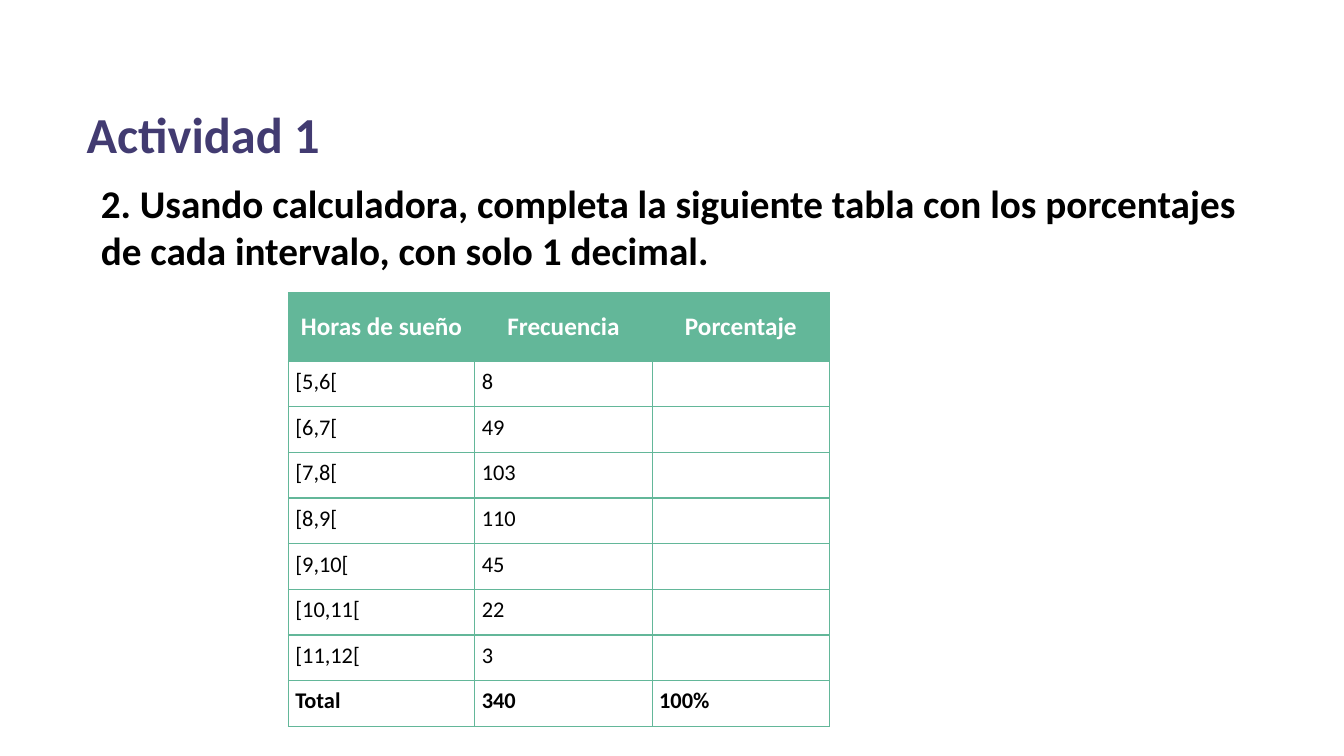
from lxml.etree import SubElement
from pptx import Presentation
from pptx.dml.color import RGBColor
from pptx.enum.text import MSO_ANCHOR as Anchor, MSO_AUTO_SIZE as AutoSize, PP_ALIGN as Align
from pptx.oxml.ns import qn
from pptx.util import Pt

FONT = "Calibri"
COLORS = {"title": "423B71", "text": "000000", "green": "63B799", "white": "FFFFFF"}

HEADERS = ["Horas de sueño", "Frecuencia", "Porcentaje"]
FREQUENCIES = [8, 49, 103, 110, 45, 22, 3]
FIRST_HOUR = 5
COLUMN_WIDTHS = [133.2, 126.7, 126.7]
HEADER_HEIGHT, ROW_HEIGHT = 49, 32.6


def add_run(paragraph, text, size, color, bold=True):
    run = paragraph.add_run()
    run.text = text
    font = run.font
    font.name, font.size, font.bold = FONT, Pt(size), bold
    font.color.rgb = RGBColor.from_string(COLORS[color])


def fill_placeholder(shape, box, text, size, color):
    shape.left, shape.top, shape.width, shape.height = map(Pt, box)
    frame = shape.text_frame
    frame.word_wrap = True
    frame.auto_size = AutoSize.NONE
    frame.vertical_anchor = Anchor.TOP
    paragraph = frame.paragraphs[0]
    paragraph.alignment = Align.LEFT
    paragraph.space_before = Pt(0)
    properties = paragraph._p.get_or_add_pPr()
    properties.set("marL", "0")
    properties.set("indent", "0")
    SubElement(properties, qn("a:buNone"))
    add_run(paragraph, text, size, color)


def add_borders(cell, color):
    properties = cell._tc.get_or_add_tcPr()
    for side in ("lnL", "lnR", "lnT", "lnB"):
        line = SubElement(properties, qn(f"a:{side}"), w=str(Pt(1)))
        solid = SubElement(line, qn("a:solidFill"))
        SubElement(solid, qn("a:srgbClr"), val=COLORS[color])


def format_cell(cell, text, is_header, is_total):
    add_borders(cell, "green")
    paragraph = cell.text_frame.paragraphs[0]
    if is_header:
        cell.fill.solid()
        cell.fill.fore_color.rgb = RGBColor.from_string(COLORS["green"])
        cell.vertical_anchor = Anchor.MIDDLE
        paragraph.alignment = Align.CENTER
        add_run(paragraph, text, 18, "white")
        return
    cell.fill.background()
    cell.margin_left = cell.margin_right = cell.margin_top = cell.margin_bottom = Pt(5)
    if text:
        add_run(paragraph, text, 16, "text", bold=is_total)


def add_frequency_table(slide, left, top):
    intervals = [[f"[{hour},{hour + 1}[", str(frequency), ""]
                 for hour, frequency in enumerate(FREQUENCIES, FIRST_HOUR)]
    rows = [HEADERS, *intervals, ["Total", str(sum(FREQUENCIES)), "100%"]]
    last = len(rows) - 1
    height = HEADER_HEIGHT + last * ROW_HEIGHT
    table = slide.shapes.add_table(len(rows), len(HEADERS), Pt(left), Pt(top),
                                   Pt(sum(COLUMN_WIDTHS)), Pt(height)).table
    table.horz_banding = False
    for column, width in zip(table.columns, COLUMN_WIDTHS):
        column.width = Pt(width)
    for index, values in enumerate(rows):
        row = table.rows[index]
        row.height = Pt(ROW_HEIGHT if index else HEADER_HEIGHT)
        for cell, text in zip(row.cells, values):
            format_cell(cell, text, index == 0, index == last)


def main():
    presentation = Presentation()
    presentation.slide_width, presentation.slide_height = Pt(960), Pt(540)
    slide = presentation.slides.add_slide(presentation.slide_layouts[1])

    # Heading and instruction
    fill_placeholder(slide.shapes.title, (54.7, 69.8, 643, 51),
                     "Actividad 1", 36, "title")
    fill_placeholder(slide.placeholders[1], (64.8, 124.6, 851, 143),
                     "2. Usando calculadora, completa la siguiente tabla con los "
                     "porcentajes de cada intervalo, con solo 1 decimal.", 28, "text")

    # Hours of sleep table
    add_frequency_table(slide, 206, 209)

    presentation.save("out.pptx")


if __name__ == "__main__":
    main()
